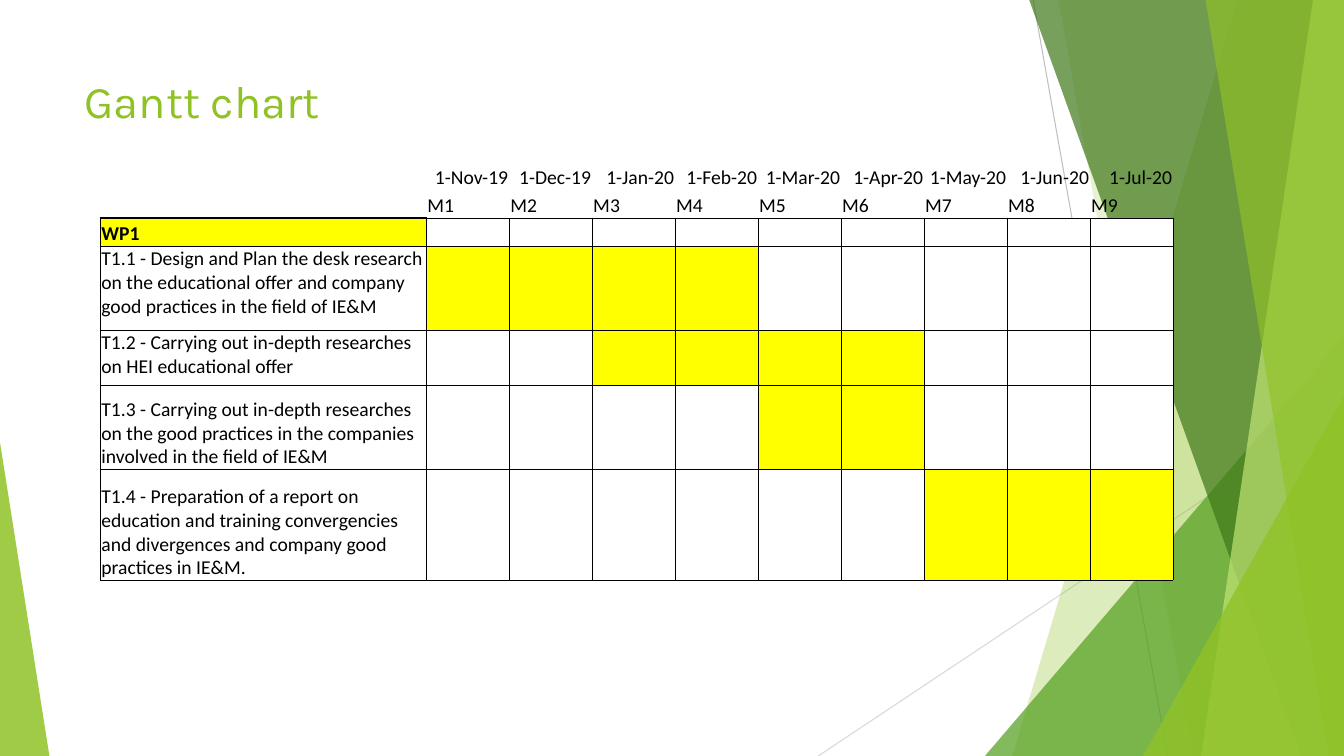
from dataclasses import dataclass

from lxml.etree import SubElement
from pptx import Presentation
from pptx.dml.color import RGBColor
from pptx.enum.shapes import MSO_CONNECTOR, MSO_SHAPE
from pptx.enum.text import MSO_ANCHOR, PP_ALIGN
from pptx.oxml.ns import qn
from pptx.util import Pt


@dataclass(frozen=True)
class Theme:
    lime: str = "90C226"
    green: str = "54A021"
    forest: str = "3F7819"
    pale: str = "C0E474"
    active: str = "FFFF00"
    blank: str = "FFFFFF"
    ink: str = "000000"
    grays: tuple = ("BFBFBF", "D9D9D9")
    title_font: str = "Karla"
    table_font: str = "Calibri"
    title_size: float = 32.4
    table_size: float = 14


@dataclass(frozen=True)
class Box:
    left: float
    top: float
    width: float
    height: float

    @property
    def right(self):
        return self.left + self.width

    @property
    def bottom(self):
        return self.top + self.height


@dataclass(frozen=True)
class Task:
    label: str
    height: float
    anchor: MSO_ANCHOR
    months: range


THEME = Theme()
PAGE = Box(0, 0, 960, 540)
NO_STYLE = "{2D5ABB26-0587-4C30-8999-92F81FD0307C}"
DATES = ["1-Nov-19", "1-Dec-19", "1-Jan-20", "1-Feb-20", "1-Mar-20",
         "1-Apr-20", "1-May-20", "1-Jun-20", "1-Jul-20"]
HEADER_HEIGHTS = [20, 20.5]
TASKS = [
    Task("WP1", 20, MSO_ANCHOR.BOTTOM, range(0)),
    Task("T1.1 - Design and Plan the desk research on the educational offer "
         "and company good practices in the field of IE&M",
         60, MSO_ANCHOR.TOP, range(1, 5)),
    Task("T1.2 - Carrying out in-depth researches on HEI educational offer",
         39.5, MSO_ANCHOR.TOP, range(3, 7)),
    Task("T1.3 - Carrying out in-depth researches on the good practices in "
         "the companies involved in the field of IE&M",
         60, MSO_ANCHOR.BOTTOM, range(5, 7)),
    Task("T1.4 - Preparation of a report on education and training "
         "convergencies and divergences and company good practices in IE&M.",
         79.3, MSO_ANCHOR.BOTTOM, range(7, 10)),
]


def tint(shape, color, opacity):
    shape.shadow.inherit = False
    shape.line.fill.background()
    shape.fill.solid()
    shape.fill.fore_color.rgb = RGBColor.from_string(color)
    color_node = shape._element.spPr.find(qn("a:solidFill")).find(qn("a:srgbClr"))
    SubElement(color_node, qn("a:alpha"), val=str(opacity * 1000))


def add_ray(slide, start, end, color):
    ray = slide.shapes.add_connector(
        MSO_CONNECTOR.STRAIGHT, *(Pt(value) for value in start + end))
    ray.line.color.rgb = RGBColor.from_string(color)
    ray.line.width = Pt(0.75)
    SubElement(ray._element.spPr, qn("a:effectLst"))


def add_band(slide, box, top_x, bottom_x, color, opacity):
    top = box.top - 0.6
    corners = [(box.right, top), (box.right, box.bottom),
               (box.left + bottom_x, box.bottom)]
    builder = slide.shapes.build_freeform(Pt(box.left + top_x), Pt(top), scale=1.0)
    builder.add_line_segments([(Pt(x), Pt(y)) for x, y in corners], close=True)
    tint(builder.convert_to_shape(), color, opacity)


def add_wedge(slide, box, apex, color, opacity):
    wedge = slide.shapes.add_shape(
        MSO_SHAPE.ISOSCELES_TRIANGLE,
        Pt(box.left), Pt(box.top), Pt(box.width), Pt(box.height))
    wedge.adjustments[0] = apex
    tint(wedge, color, opacity)


def corner_box(box, left, top):
    return Box(box.left + left, box.top + top, box.width - left, box.height - top)


def add_backdrop(slide, box):
    add_ray(slide, (box.left + 738, box.top),
            (box.left + 834, box.bottom), THEME.grays[0])
    add_ray(slide, (box.right, box.top + 290),
            (box.left + 584.5, box.bottom), THEME.grays[1])
    add_band(slide, box, 884, 723, THEME.lime, 30)
    add_band(slide, box, 756, 852, THEME.lime, 20)
    add_wedge(slide, corner_box(box, 703.5, 240), 1, THEME.green, 72)
    add_band(slide, box, 735, 929.5, THEME.forest, 70)
    add_band(slide, box, 938, 858, THEME.pale, 70)
    add_band(slide, box, 861, 949, THEME.lime, 65)
    add_wedge(slide, corner_box(box, 816.5, 283), 1, THEME.lime, 80)
    add_wedge(slide, Box(box.left, box.top + 316, 35.3, box.height - 316),
              0, THEME.lime, 85)


def style_font(font, name, size, color):
    font.name = name
    font.size = Pt(size)
    font.color.rgb = RGBColor.from_string(color)


def add_title(slide, box):
    frame = slide.shapes.add_textbox(
        Pt(box.left), Pt(box.top), Pt(box.width), Pt(box.height)).text_frame
    frame.word_wrap = True
    para = frame.paragraphs[0]
    para.text = "Gantt chart"
    style_font(para.font, THEME.title_font, THEME.title_size, THEME.lime)


def set_borders(cell, widths):
    properties = cell._tc.get_or_add_tcPr()
    for side in "LRTB":
        if side in widths:
            line = SubElement(properties, qn(f"a:ln{side}"), w=str(Pt(widths[side])))
            fill = SubElement(line, qn("a:solidFill"))
            SubElement(fill, qn("a:srgbClr"), val=THEME.ink)


def fill_cell(cell, text="", borders=None, color=None, bold=False,
              align=PP_ALIGN.LEFT, anchor=MSO_ANCHOR.BOTTOM):
    set_borders(cell, borders or {})
    if color:
        cell.fill.solid()
        cell.fill.fore_color.rgb = RGBColor.from_string(color)
    else:
        cell.fill.background()
    cell.margin_left = cell.margin_right = cell.margin_top = Pt(0.75)
    cell.margin_bottom = 0
    cell.vertical_anchor = anchor
    para = cell.text_frame.paragraphs[0]
    para.alignment = align
    style_font(para.font, THEME.table_font, THEME.table_size, THEME.ink)
    para.font.bold = bold
    if text:
        para.text = text
    else:
        SubElement(para._p, qn("a:endParaRPr"), sz=str(int(THEME.table_size * 100)))


def add_gantt(slide, box, label_width):
    heights = HEADER_HEIGHTS + [task.height for task in TASKS]
    table = slide.shapes.add_table(
        len(heights), len(DATES) + 1,
        Pt(box.left), Pt(box.top), Pt(box.width), Pt(box.height)).table
    table.first_row = table.horz_banding = False
    table._tbl.tblPr.find(qn("a:tableStyleId")).text = NO_STYLE
    month_width = (box.width - label_width) / len(DATES)
    for index, column in enumerate(table.columns):
        column.width = Pt(month_width if index else label_width)
    for row, height in zip(table.rows, heights):
        row.height = Pt(height)

    fill_cell(table.cell(0, 0))
    fill_cell(table.cell(1, 0), borders={"B": 1})
    for month, date in enumerate(DATES, 1):
        fill_cell(table.cell(0, month), date, align=PP_ALIGN.RIGHT)
        fill_cell(table.cell(1, month), f"M{month}", {"B": 0.5})

    grid = dict.fromkeys("LRTB", 0.5)
    for row, task in enumerate(TASKS, len(HEADER_HEIGHTS)):
        package_row = not task.months
        fill_cell(table.cell(row, 0), task.label,
                  grid | {"L": 1, "T": 1 if package_row else 0.5},
                  THEME.active if package_row else None,
                  package_row, anchor=task.anchor)
        for month in range(1, len(DATES) + 1):
            color = THEME.active if month in task.months else THEME.blank
            fill_cell(table.cell(row, month), borders=grid, color=color)


def main():
    deck = Presentation()
    deck.slide_width, deck.slide_height = Pt(PAGE.width), Pt(PAGE.height)
    slide = deck.slides.add_slide(deck.slide_layouts[6])
    add_backdrop(slide, PAGE)
    add_gantt(slide, Box(71.7, 115.2, 766.5, 299.3), 232.8)
    add_title(slide, Box(53.3, 48.5, 677, 40))
    deck.save("out.pptx")


if __name__ == "__main__":
    main()
